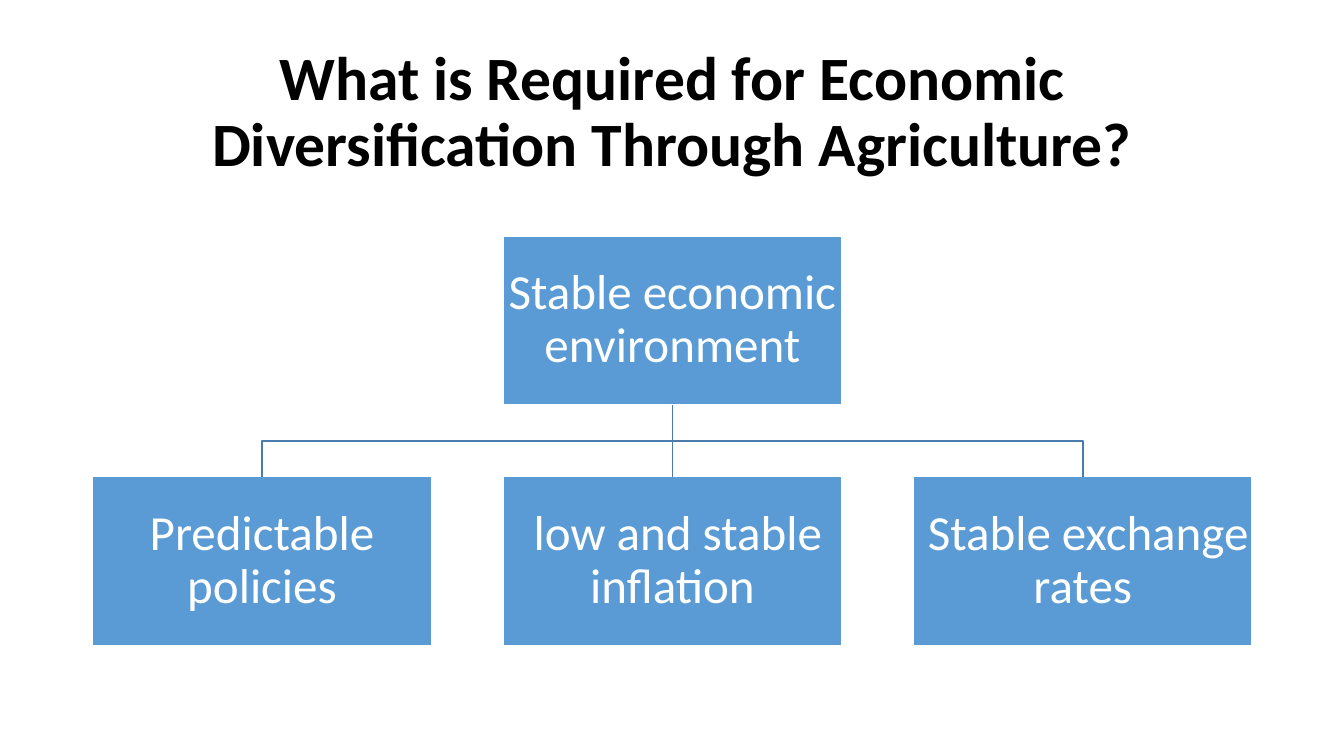
from pptx import Presentation
from pptx.dml.color import RGBColor
from pptx.enum.shapes import MSO_CONNECTOR, MSO_SHAPE
from pptx.enum.text import MSO_ANCHOR, MSO_AUTO_SIZE, PP_ALIGN
from pptx.util import Inches, Pt
from lxml import etree

RECT = MSO_SHAPE.RECTANGLE
STRAIGHT = MSO_CONNECTOR.STRAIGHT
MIDDLE = MSO_ANCHOR.MIDDLE
CENTER = PP_ALIGN.CENTER
NO_FIT = MSO_AUTO_SIZE.NONE
A_NS = "http://schemas.openxmlformats.org/drawingml/2006/main"

THEME = {
    "font": "Calibri",
    "black": RGBColor.from_string("000000"),
    "white": RGBColor.from_string("FFFFFF"),
    "box": RGBColor.from_string("5B9BD5"),
    "link": RGBColor.from_string("497CAB"),
    "title": Pt(44),
    "label": Pt(35),
    "line": Pt(1),
}


def write(shape, text, size, color, bold=False, inset=0.1, inset_y=0.05):
    frame = shape.text_frame
    frame.word_wrap = True
    frame.auto_size = NO_FIT
    frame.vertical_anchor = MIDDLE
    frame.margin_left = frame.margin_right = Inches(inset)
    frame.margin_top = frame.margin_bottom = Inches(inset_y)
    para = frame.paragraphs[0]
    para.alignment = CENTER
    para.line_spacing = 0.9
    run = para.add_run()
    run.text = text
    run.font.name = THEME["font"]
    run.font.size = size
    run.font.bold = bold
    run.font.color.rgb = color


def add_box(slide, mid, top, text):
    box = slide.shapes.add_shape(
        RECT, Inches(mid - WIDE / 2), Inches(top), Inches(WIDE), Inches(HIGH))
    box.shadow.inherit = False
    box.fill.solid()
    box.fill.fore_color.rgb = THEME["box"]
    box.line.color.rgb = THEME["white"]
    box.line.width = THEME["line"]
    write(box, text, THEME["label"], THEME["white"], inset=0.02, inset_y=0.02)
    return box


# Slide and title
deck = Presentation()
deck.slide_width = Inches(13.33)
deck.slide_height = Inches(7.5)
slide = deck.slides.add_slide(deck.slide_layouts[5])

title = slide.shapes.title
title.left, title.top = Inches(0.92), Inches(0.4)
title.width, title.height = Inches(11.5), Inches(1.45)
write(title, "What is Required for Economic Diversification Through Agriculture?",
      THEME["title"], THEME["black"], bold=True)

# Chart grid
WIDE, HIGH = 3.36, 1.68
MID, PITCH = 6.67, 4.07
TOP, LOW = 2.34, 4.73
FORK = (TOP + HIGH + LOW) / 2

# Root box
root = add_box(slide, MID, TOP, "Stable economic environment")

# Child boxes and their links to the root
labels = ["Predictable policies", " low and stable inflation", " Stable exchange rates"]
for step, label in zip((-1, 0, 1), labels):
    mid = MID + step * PITCH
    child = add_box(slide, mid, LOW, label)
    if step:
        path = slide.shapes.build_freeform(Inches(MID), Inches(TOP + HIGH))
        bends = [(MID, FORK), (mid, FORK), (mid, LOW)]
        path.add_line_segments([(Inches(x), Inches(y)) for x, y in bends], close=False)
        link = path.convert_to_shape()
        link.fill.background()
        link.shadow.inherit = False
    else:
        link = slide.shapes.add_connector(STRAIGHT, 0, 0, 0, 0)
        link.begin_connect(root, 2)
        link.end_connect(child, 0)
    link.line.color.rgb = THEME["link"]
    link.line.width = THEME["line"]
    if not step:
        etree.SubElement(link._element.spPr, f"{{{A_NS}}}effectLst")

deck.save("out.pptx")
